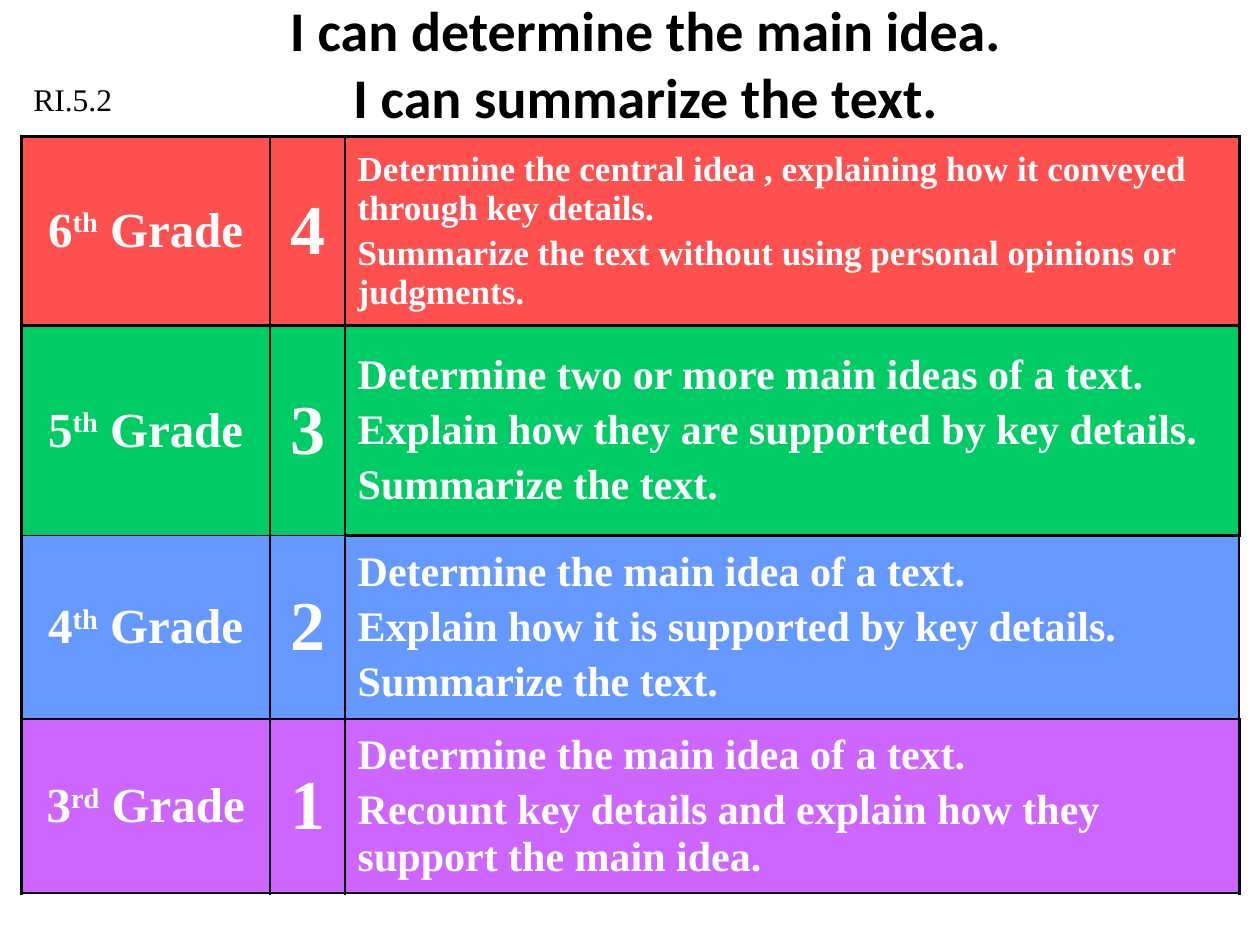
from dataclasses import dataclass
from typing import NamedTuple

from lxml import etree
from pptx import Presentation
from pptx.dml import color
from pptx.enum import text
from pptx.oxml import ns
from pptx.util import Pt


@dataclass(frozen=True)
class Theme:
    ink: str = "000000"
    paper: str = "FFFFFF"
    red: str = "FF5050"
    green: str = "00CC66"
    blue: str = "6699FF"
    purple: str = "CC66FF"
    title_font: str = "Calibri"
    body_font: str = "Times New Roman"
    title: float = 32
    standard: float = 18
    grade: float = 28
    score: float = 40
    goal: float = 24
    small_goal: float = 20


THEME = Theme()


class Edges(NamedTuple):
    left: float
    top: float
    right: float
    bottom: float


@dataclass(frozen=True)
class Level:
    grade: str
    ordinal: str
    score: str
    goals: tuple[str, ...]
    fill: str
    height: float
    edges: tuple[Edges, Edges, Edges]
    goal_size: float = THEME.goal


GOAL_EDGES = Edges(1, 1.5, 2.25, 1.5)
LEVELS = (
    Level("6", "th", "4",
          ("Determine the central idea , explaining how it conveyed through key details.",
           "Summarize the text without using personal opinions or judgments."),
          THEME.red, 108,
          (Edges(2.25, 2.25, 1, 1.5), Edges(1, 2.25, 1, 1.5), Edges(1, 2.25, 2.25, 1.5)),
          THEME.small_goal),
    Level("5", "th", "3",
          ("Determine two or more main ideas of a text.",
           "Explain how they are supported by key details.",
           "Summarize the text."),
          THEME.green, 120,
          (Edges(2.25, 1.5, 1, 1), Edges(1, 1.5, 1, 1), GOAL_EDGES)),
    Level("4", "th", "2",
          ("Determine the main idea of a text.",
           "Explain how it is supported by key details.",
           "Summarize the text."),
          THEME.blue, 105,
          (Edges(2.25, 1, 1.5, 1), Edges(1.5, 1, 1.5, 1), Edges(1.5, 1.5, 1.5, 1.5))),
    Level("3", "rd", "1",
          ("Determine the main idea of a text.",
           "Recount key details and explain how they support the main idea."),
          THEME.purple, 99.5,
          (Edges(2.25, 1, 1, 1.5), Edges(1, 1, 1, 1.5), GOAL_EDGES)),
)
COLUMN_WIDTHS = (142, 43, 511)


def set_font(paragraph, name: str, size: float, ink: str, bold: bool = False) -> None:
    paragraph.font.name = name
    paragraph.font.size = Pt(size)
    paragraph.font.bold = bold
    paragraph.font.color.rgb = color.RGBColor.from_string(ink)


def style_cell(cell, fill: str, edges: Edges) -> None:
    cell.vertical_anchor = text.MSO_ANCHOR.MIDDLE
    properties = cell._tc.get_or_add_tcPr()
    for side, width in zip(("lnL", "lnT", "lnR", "lnB"), (edges.left, edges.top, edges.right, edges.bottom)):
        border = etree.SubElement(properties, ns.qn(f"a:{side}"), w=str(Pt(width)))
        paint = etree.SubElement(border, ns.qn("a:solidFill"))
        etree.SubElement(paint, ns.qn("a:srgbClr"), val=THEME.ink)
    cell.fill.solid()
    cell.fill.fore_color.rgb = color.RGBColor.from_string(fill)


def style_entry(paragraph, size: float, centred: bool = False) -> None:
    set_font(paragraph, THEME.body_font, size, THEME.paper, bold=True)
    paragraph.space_before = Pt(size * 0.2)
    paragraph.alignment = text.PP_ALIGN.CENTER if centred else text.PP_ALIGN.LEFT


def fill_level(cells, level: Level) -> None:
    for cell, edges in zip(cells, level.edges):
        style_cell(cell, level.fill, edges)
    grade_cell, score_cell, goals_cell = cells

    grade = grade_cell.text_frame.paragraphs[0]
    style_entry(grade, THEME.grade, centred=True)
    grade.add_run().text = level.grade
    ordinal = grade.add_run()
    ordinal.text = level.ordinal
    ordinal.font._element.set("baseline", "30000")
    grade.add_run().text = " Grade"

    score = score_cell.text_frame.paragraphs[0]
    score.text = level.score
    style_entry(score, THEME.score, centred=True)

    for index, goal in enumerate(level.goals):
        frame = goals_cell.text_frame
        entry = frame.add_paragraph() if index else frame.paragraphs[0]
        entry.text = goal
        style_entry(entry, level.goal_size)


def add_rubric(slide) -> None:
    rubric = slide.shapes.add_table(
        len(LEVELS), len(COLUMN_WIDTHS), Pt(12.24), Pt(78),
        Pt(sum(COLUMN_WIDTHS)), Pt(sum(level.height for level in LEVELS))).table
    rubric.first_row = rubric.horz_banding = False
    for column, width in zip(rubric.columns, COLUMN_WIDTHS):
        column.width = Pt(width)
    for row, level in zip(rubric.rows, LEVELS):
        row.height = Pt(level.height)
        fill_level(tuple(row.cells), level)


def add_label(slide, left: float, top: float, width: float, height: float):
    frame = slide.shapes.add_textbox(Pt(left), Pt(top), Pt(width), Pt(height)).text_frame
    frame.word_wrap = True
    return frame


def main() -> None:
    deck = Presentation()
    deck.slide_width, deck.slide_height = Pt(720), Pt(540)
    slide = deck.slides.add_slide(deck.slide_layouts[6])

    add_rubric(slide)

    standard = add_label(slide, 12, 42, 102, 29).paragraphs[0]
    standard.text = "RI.5.2"
    set_font(standard, THEME.body_font, THEME.standard, THEME.ink)

    heading = add_label(slide, 30, 0, 678, 72)
    heading.vertical_anchor = text.MSO_ANCHOR.MIDDLE
    title = heading.paragraphs[0]
    title.alignment = text.PP_ALIGN.CENTER
    title.add_run().text = "I can determine the main idea."
    title.add_line_break()
    title.add_run().text = "I can summarize the text."
    set_font(title, THEME.title_font, THEME.title, THEME.ink, bold=True)

    deck.save("out.pptx")


if __name__ == "__main__":
    main()
